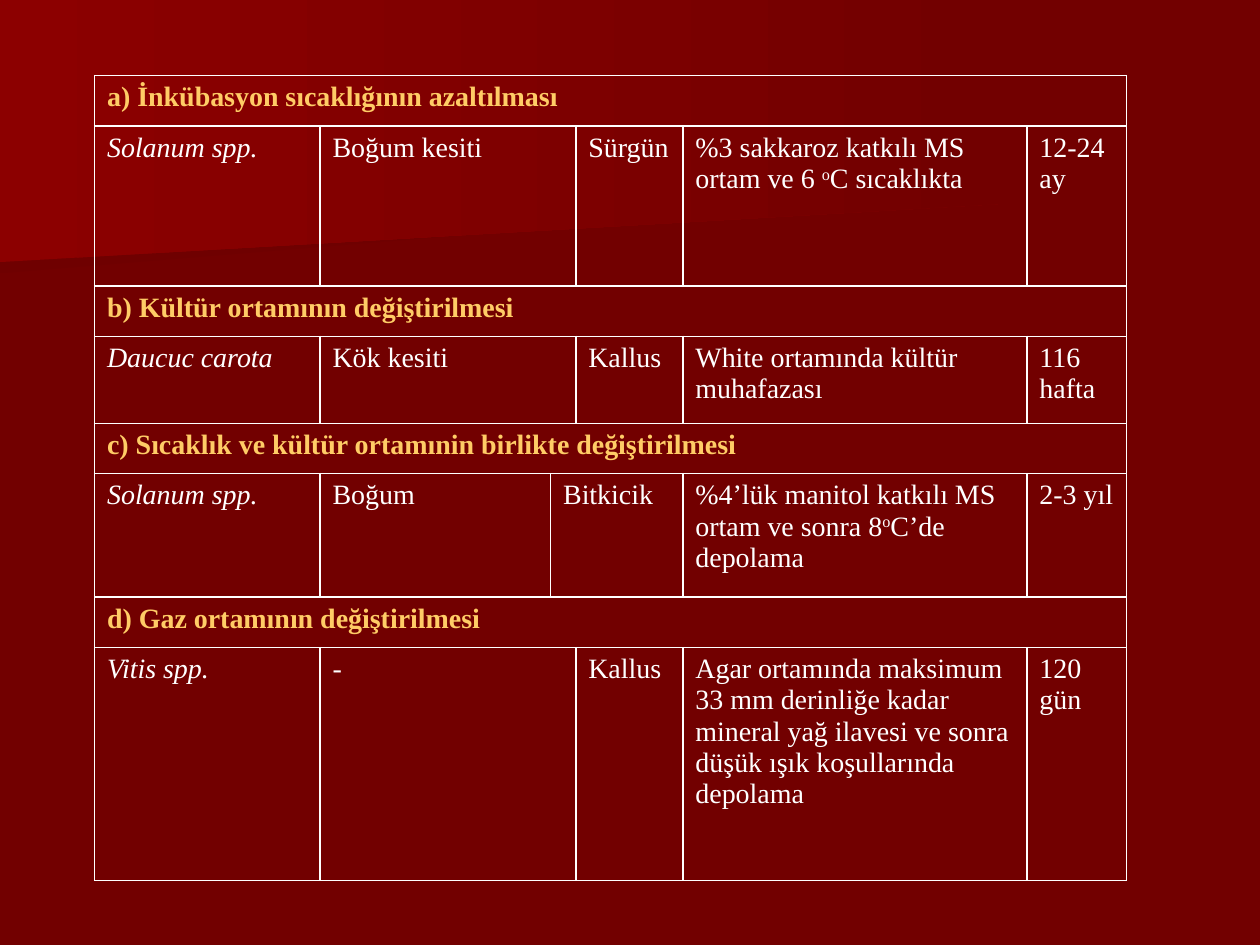
from lxml.etree import SubElement
from pptx import Presentation
from pptx.dml.color import RGBColor
from pptx.enum.text import PP_ALIGN as Align
from pptx.oxml.ns import qn
from pptx.util import Inches, Pt

DARK_RED = RGBColor(0x72, 0x00, 0x00)
SHADE_RED = RGBColor(0x6F, 0x00, 0x00)
BRIGHT_RED = RGBColor(0x8C, 0x00, 0x00)
GOLD = RGBColor(0xFF, 0xCC, 0x66)
WHITE = RGBColor(0xFF, 0xFF, 0xFF)

FONT = "Times New Roman"
COLUMN_WIDTHS = [1.79, 1.83, 0.2, 0.85, 2.73, 0.79]
HEADING_HEIGHT = 0.4

# Background bands: start colour and outline
BANDS = [
    (SHADE_RED, [(7.78, 1.53), (0, 2.17), (0, 1.01), (7.79, 1.01), (7.78, 1.28)]),
    (BRIGHT_RED, [(7.92, 1.62), (0, 2.08), (0, 0), (7.92, 0)]),
]

# Heading, height of the entry row, columns where its cells start, cell texts.
# Text between carets is superscript.
STARTS = [0, 1, 3, 4, 5]
SECTIONS = [
    ("a) İnkübasyon sıcaklığının azaltılması", 1.27, STARTS,
     ["Solanum spp.", "Boğum kesiti", "Sürgün",
      "%3 sakkaroz katkılı MS ortam ve 6 ^o^C sıcaklıkta", "12-24 ay"]),
    ("b) Kültür ortamının değiştirilmesi", 0.69, STARTS,
     ["Daucuc carota", "Kök kesiti", "Kallus",
      "White ortamında kültür muhafazası", "116 hafta"]),
    ("c) Sıcaklık ve kültür ortamınin birlikte değiştirilmesi", 0.98, [0, 1, 2, 4, 5],
     ["Solanum spp.", "Boğum", "Bitkicik",
      "%4’lük manitol katkılı MS ortam ve sonra 8^o^C’de depolama", "2-3 yıl"]),
    ("d) Gaz ortamının değiştirilmesi", 1.85, STARTS,
     ["Vitis spp.", "-", "Kallus",
      "Agar ortamında maksimum 33 mm derinliğe kadar mineral yağ ilavesi "
      "ve sonra düşük ışık koşullarında depolama", "120 gün"]),
]


def add_band(slide, color, points):
    corners = [(Inches(x), Inches(y)) for x, y in points]
    builder = slide.shapes.build_freeform(*corners[0])
    builder.add_line_segments(corners[1:], close=True)
    band = builder.convert_to_shape()
    band.shadow.inherit = False
    band.line.fill.background()
    band.fill.gradient()
    band.fill.gradient_angle = 0
    for stop, position, stop_color in zip(band.fill.gradient_stops, (0, 1), (color, DARK_RED)):
        stop.position = position
        stop.color.rgb = stop_color


def style_cell(cell):
    """Give a cell thin white borders and no fill."""
    properties = cell._tc.get_or_add_tcPr()
    for side in ("a:lnL", "a:lnR", "a:lnT", "a:lnB"):
        border = SubElement(properties, qn(side), w=str(Pt(1)))
        fill = SubElement(border, qn("a:solidFill"))
        SubElement(fill, qn("a:srgbClr"), val=str(WHITE))
    cell.fill.background()


def write_cell(cell, text, color=WHITE, bold=False, italic=False, align=Align.LEFT):
    para = cell.text_frame.paragraphs[0]
    para.alignment = align
    for index, part in enumerate(text.split("^")):
        span = para.add_run()
        span.text = part
        font = span.font
        font.name, font.size = FONT, Pt(16)
        font.bold, font.italic = bold, italic
        font.color.rgb = color
        if index % 2:
            span._r.get_or_add_rPr().set("baseline", "30000")


def fill_row(table, row, starts, texts, styles):
    """Write texts into cells that reach up to the next start column."""
    ends = starts[1:] + [len(COLUMN_WIDTHS)]
    for start, end, text, style in zip(starts, ends, texts, styles):
        cell = table.cell(row, start)
        if end - start > 1:
            cell.merge(table.cell(row, end - 1))
        write_cell(cell, text, **style)


def add_methods_table(slide):
    heights = [height for section in SECTIONS for height in (HEADING_HEIGHT, section[1])]
    table = slide.shapes.add_table(
        len(heights), len(COLUMN_WIDTHS), Inches(0.75), Inches(0.6),
        Inches(sum(COLUMN_WIDTHS)), Inches(sum(heights))).table
    table.first_row = table.horz_banding = False
    for column, width in zip(table.columns, COLUMN_WIDTHS):
        column.width = Inches(width)
    for row, height in zip(table.rows, heights):
        row.height = Inches(height)
    for cell in table.iter_cells():
        style_cell(cell)

    heading_style = {"color": GOLD, "bold": True, "align": Align.JUSTIFY}
    entry_styles = [{"italic": True}] + [{}] * 4
    for index, (heading, _, starts, texts) in enumerate(SECTIONS):
        fill_row(table, 2 * index, [0], [heading], [heading_style])
        fill_row(table, 2 * index + 1, starts, texts, entry_styles)


def main():
    deck = Presentation()
    deck.slide_width, deck.slide_height = Inches(10), Inches(7.5)
    slide = deck.slides.add_slide(deck.slide_layouts[6])

    # Background
    slide.background.fill.solid()
    slide.background.fill.fore_color.rgb = DARK_RED
    for color, points in BANDS:
        add_band(slide, color, points)

    # Storage methods
    add_methods_table(slide)
    deck.save("out.pptx")


if __name__ == "__main__":
    main()
